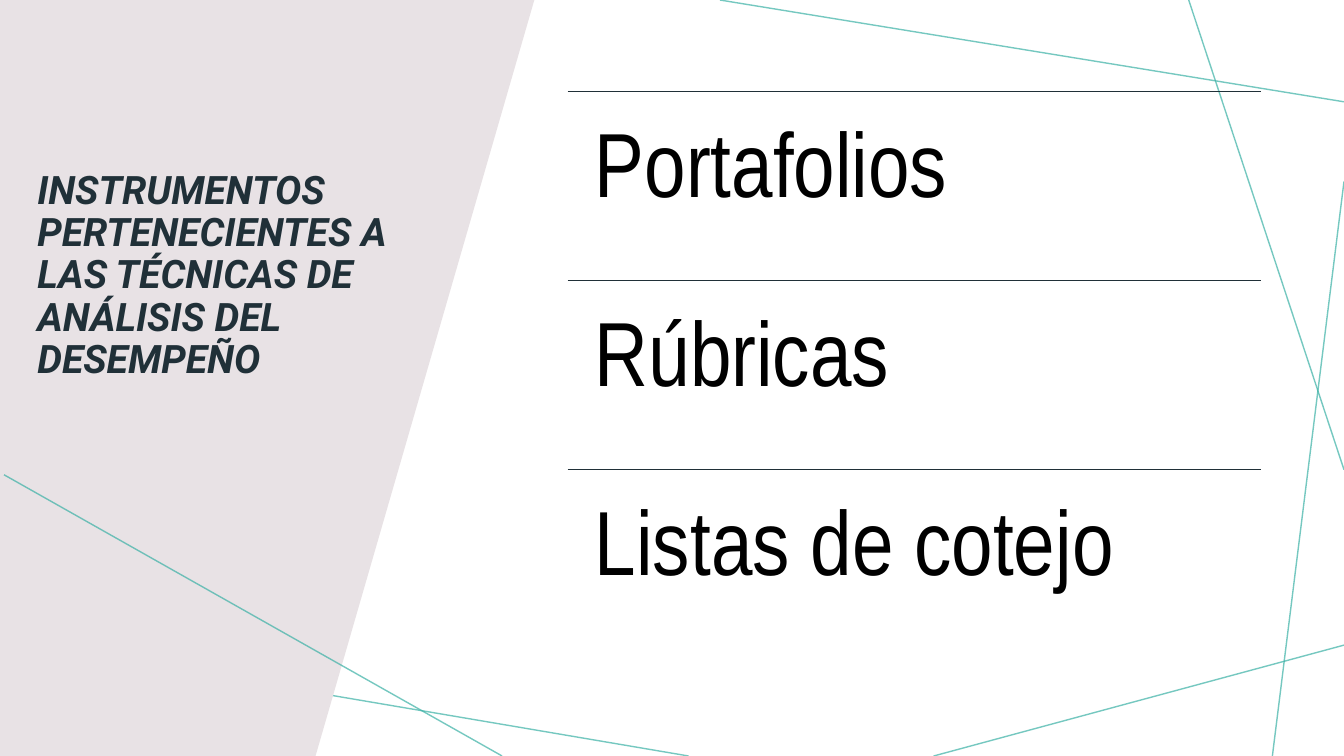
from dataclasses import dataclass

from lxml.etree import SubElement
from pptx import Presentation
from pptx.dml.color import RGBColor
from pptx.enum.shapes import MSO_CONNECTOR
from pptx.enum.text import MSO_ANCHOR, MSO_AUTO_SIZE, PP_ALIGN
from pptx.oxml.ns import qn
from pptx.util import Inches, Pt

# Content
TITLE = "INSTRUMENTOS PERTENECIENTES A LAS TÉCNICAS DE ANÁLISIS DEL DESEMPEÑO"
INSTRUMENTS = ["Portafolios", "Rúbricas", "Listas de cotejo"]

# Decorative lines: x1, y1, x2, y2 in inches
LINES_BEHIND_PANEL = [
    (6.83, 7.5, 0, 6.34),
    (13.33, 6.4, 9.26, 7.5),
    (13.33, 1.8, 12.62, 7.5),
    (13.33, 4.66, 11.79, 0),
    (13.33, 1.01, 7.14, 0),
]
LINE_OVER_PANEL = (0.04, 4.71, 4.98, 7.5)
PANEL = [(3.13, 7.5), (0, 7.5), (0, 0), (5.3, 0)]

# Instrument list geometry
LIST_LEFT, LIST_TOP, LIST_WIDTH, ROW_HEIGHT = 5.63, 0.91, 6.88, 1.875
ROW_INSET = 0.27


@dataclass(frozen=True)
class Theme:
    dark: RGBColor = RGBColor(0x20, 0x30, 0x38)
    teal: RGBColor = RGBColor(0x3B, 0xB1, 0xA6)
    panel: RGBColor = RGBColor(0xE8, 0xE2, 0xE5)
    text: RGBColor = RGBColor(0, 0, 0)
    title_font: str = "Roboto"
    list_font: str = "Arial Narrow"
    title_size: int = 28
    list_size: int = 65
    line_width: int = 1
    teal_alpha: int = 70


THEME = Theme()


def add_line(slide, ends, color, alpha=100):
    line = slide.shapes.add_connector(
        MSO_CONNECTOR.STRAIGHT, *(Inches(v) for v in ends))
    line.line.color.rgb = color
    line.line.width = Pt(THEME.line_width)
    sp_pr = line._element.spPr
    if alpha < 100:
        clr = sp_pr.find(".//" + qn("a:srgbClr"))
        SubElement(clr, qn("a:alpha")).set("val", str(alpha * 1000))
    SubElement(sp_pr, qn("a:effectLst"))


def add_panel(slide):
    start, *rest = [(Inches(x), Inches(y)) for x, y in PANEL]
    builder = slide.shapes.build_freeform(*start)
    builder.add_line_segments(rest, close=True)
    sp = builder.convert_to_shape()
    sp.shadow.inherit = False
    sp.fill.solid()
    sp.fill.fore_color.rgb = THEME.panel
    sp.line.fill.background()


def place(sp, left, top, width, height):
    sp.left, sp.top = Inches(left), Inches(top)
    sp.width, sp.height = Inches(width), Inches(height)


def set_text(sp, text, font, size, color, space_after):
    tf = sp.text_frame
    tf.text = text
    tf.word_wrap = True
    tf.auto_size = MSO_AUTO_SIZE.NONE
    tf.vertical_anchor = MSO_ANCHOR.TOP
    p = tf.paragraphs[0]
    p.alignment = PP_ALIGN.LEFT
    p.line_spacing = 0.9
    p.space_before = Pt(0)
    p.space_after = Pt(space_after)
    r = p.runs[0]
    r.font.name = font
    r.font.size = Pt(size)
    r.font.color.rgb = color
    return r


def add_title(slide):
    sp = slide.shapes.title
    place(sp, 0.27, 1.64, 3.93, 3.9)
    r = set_text(sp, TITLE, THEME.title_font, THEME.title_size, THEME.dark, 6)
    r.font.bold = r.font.italic = True
    # Bring the title in front of the panel
    slide.shapes._spTree.append(sp._element)


def add_instrument(slide, index, name):
    top = LIST_TOP + index * ROW_HEIGHT
    add_line(slide, (LIST_LEFT, top, LIST_LEFT + LIST_WIDTH, top), THEME.dark)
    sp = slide.shapes.add_textbox(0, 0, 0, 0)
    place(sp, LIST_LEFT, top, LIST_WIDTH, ROW_HEIGHT)
    set_text(sp, name, THEME.list_font, THEME.list_size, THEME.text, 0)
    tf = sp.text_frame
    tf.margin_left = tf.margin_right = Inches(ROW_INSET)
    tf.margin_top = tf.margin_bottom = Inches(ROW_INSET)


def main():
    prs = Presentation()
    prs.slide_width, prs.slide_height = Inches(13.33), Inches(7.5)
    slide = prs.slides.add_slide(prs.slide_layouts[5])

    # Background lines and title panel
    for ends in LINES_BEHIND_PANEL:
        add_line(slide, ends, THEME.teal, THEME.teal_alpha)
    add_panel(slide)
    add_title(slide)
    add_line(slide, LINE_OVER_PANEL, THEME.teal, THEME.teal_alpha)

    # Ruled list of instruments
    for index, name in enumerate(INSTRUMENTS):
        add_instrument(slide, index, name)

    prs.save("out.pptx")


if __name__ == "__main__":
    main()
